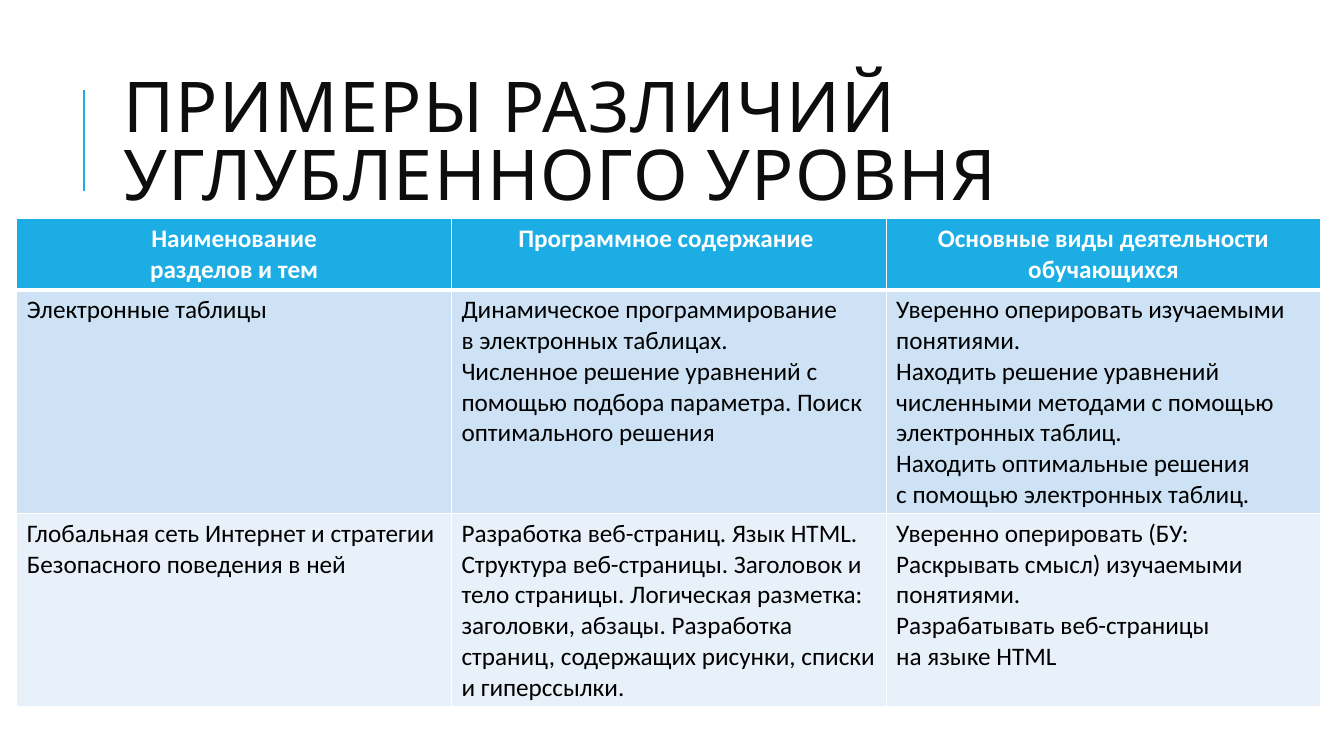
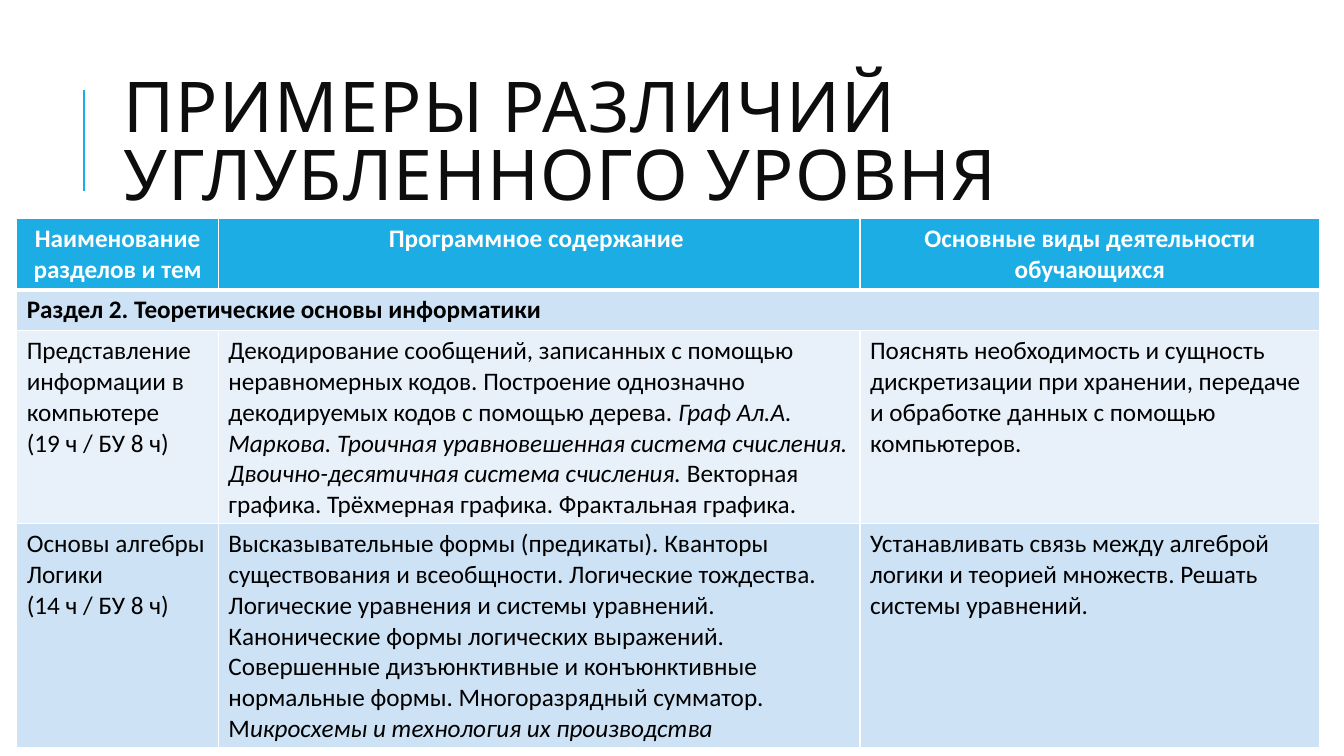
from lxml import etree
from pptx import Presentation
from pptx.dml.color import RGBColor
from pptx.enum.shapes import MSO_CONNECTOR
from pptx.enum.text import MSO_ANCHOR, PP_ALIGN
from pptx.oxml.ns import qn
from pptx.util import Pt

PX = 9525
ACCENT = RGBColor(0x1C, 0xAD, 0xE4)
INK = RGBColor(0x0D, 0x0D, 0x0D)
BLACK = RGBColor(0, 0, 0)
WHITE = RGBColor(0xFF, 0xFF, 0xFF)
BANDS = (RGBColor(0xE8, 0xF1, 0xFA), RGBColor(0xCD, 0xE3, 0xF5))
STRAIGHT = MSO_CONNECTOR.STRAIGHT
MIDDLE = MSO_ANCHOR.MIDDLE
CENTER, LEFT = PP_ALIGN.CENTER, PP_ALIGN.LEFT

TITLE = "ПРИМЕРЫ РАЗЛИЧИЙ УГЛУБЛЕННОГО УРОВНЯ"
HEADER = (2, [
    "Наименование\nразделов и тем",
    "Программное содержание ",
    "Основные виды деятельности\nобучающихся",
])
TABLES = [
    ([414, 414, 414], [
        (7, [
            "Электронные таблицы",
            "Динамическое программирование\nв электронных таблицах.\n"
            "Численное решение уравнений с помощью подбора параметра. Поиск\n"
            "оптимального решения",
            "Уверенно оперировать изучаемыми\nпонятиями.\n"
            "Находить решение уравнений\nчисленными методами с помощью\n"
            "электронных таблиц.\nНаходить оптимальные решения\n"
            "с помощью электронных таблиц.",
        ]),
        (6, [
            "Глобальная сеть Интернет и стратегии\nБезопасного поведения в ней",
            "Разработка веб-страниц. Язык HTML.\n"
            "Структура веб-страницы. Заголовок и\n"
            "тело страницы. Логическая разметка:\n"
            "заголовки, абзацы. Разработка страниц, содержащих рисунки, "
            "списки и гиперссылки.",
            "Уверенно оперировать (БУ: Раскрывать смысл) изучаемыми\n"
            "понятиями.\nРазрабатывать веб-страницы\nна языке HTML",
        ]),
    ]),
    ([192, 611, 438], [
        (1, ["Раздел 2. Теоретические основы информатики"]),
        (6, [
            "Представление информации в компьютере\n(19 ч / БУ 8 ч)",
            "Декодирование сообщений, записанных с помощью неравномерных кодов. "
            "Построение однозначно декодируемых кодов с помощью дерева. "
            "*Граф Ал.А. Маркова. Троичная уравновешенная система счисления. "
            "Двоично-десятичная система счисления.* Векторная графика. "
            "Трёхмерная графика. Фрактальная графика.",
            "Пояснять необходимость и сущность дискретизации при хранении, "
            "передаче и обработке данных с помощью компьютеров.",
        ]),
        (7, [
            "Основы алгебры\nЛогики\n(14 ч / БУ 8 ч)",
            "Высказывательные формы (предикаты). Кванторы\n"
            "существования и всеобщности. Логические тождества. "
            "Логические уравнения и системы уравнений. "
            "Канонические формы логических выражений. "
            "Совершенные дизъюнктивные и конъюнктивные нормальные формы. "
            "Многоразрядный сумматор. М*икросхемы и технология их производства*",
            "Устанавливать связь между алгеброй\n"
            "логики и теорией множеств. Решать системы уравнений.",
        ]),
    ]),
]


class Deck:
    """Hold the shared style and the current slide."""

    def __init__(self):
        self.prs = Presentation()
        self.prs.slide_width, self.prs.slide_height = 1280 * PX, 720 * PX
        self.s = None

    def slide(self, title):
        self.s = self.prs.slides.add_slide(self.prs.slide_layouts[6])
        self.line(80, 182, 80, 86)
        self.title(title)

    def line(self, x1, y1, x2, y2):
        ln = self.s.shapes.add_connector(
            STRAIGHT, x1 * PX, y1 * PX, x2 * PX, y2 * PX)
        ln.line.color.rgb = ACCENT
        ln.line.width = Pt(1.5)
        etree.SubElement(ln._element.spPr, qn("a:effectLst"))

    def title(self, text):
        sp = self.s.shapes.add_textbox(108 * PX, 61 * PX, 1020 * PX, 157 * PX)
        tf = sp.text_frame
        tf.word_wrap = True
        tf.vertical_anchor = MIDDLE
        p = tf.paragraphs[0]
        p.line_spacing = 0.8
        r = self.run(p, text, "Cabin", 50, INK)
        r._r.get_or_add_rPr().set("spc", "100")

    def run(self, p, text, font, size, color, bold=False, italic=False):
        r = p.add_run()
        r.text = text
        r.font.name, r.font.size = font, Pt(size)
        r.font.color.rgb = color
        r.font.bold, r.font.italic = bold, italic
        return r

    def table(self, x, y, cols, rows):
        heights = [10 + 29 * lines for lines, _ in rows]
        tbl = self.s.shapes.add_table(
            len(rows), len(cols), x * PX, y * PX,
            sum(cols) * PX, sum(heights) * PX).table
        tbl.first_row = tbl.horz_banding = False
        for col, width in zip(tbl.columns, cols):
            col.width = width * PX
        for i, (_, texts) in enumerate(rows):
            tbl.rows[i].height = heights[i] * PX
            section = len(texts) == 1
            for j in range(len(cols)):
                cell = tbl.cell(i, j)
                self.borders(cell, 3 if i == 1 else 1, 3 if i == 0 else 1)
                cell.fill.solid()
                cell.fill.fore_color.rgb = BANDS[i % 2] if i else ACCENT
            if section:
                tbl.cell(i, 0).merge(tbl.cell(i, len(cols) - 1))
            for j, text in enumerate(texts):
                self.cell_text(tbl.cell(i, j), text, i == 0, section)

    def cell_text(self, cell, text, header, section):
        tf = cell.text_frame
        for k, para in enumerate(text.split("\n")):
            p = tf.add_paragraph() if k else tf.paragraphs[0]
            p.alignment = CENTER if header else LEFT
            for n, part in enumerate(para.split("*")):
                if part:
                    self.run(p, part, "Calibri", 18, WHITE if header else BLACK,
                             header or section, n % 2 == 1)

    def borders(self, cell, top, bottom):
        tc_pr = cell._tc.get_or_add_tcPr()
        for side, width in (("L", 1), ("R", 1), ("T", top), ("B", bottom)):
            ln = etree.SubElement(tc_pr, qn("a:ln" + side), w=str(Pt(width)))
            fill = etree.SubElement(ln, qn("a:solidFill"))
            etree.SubElement(fill, qn("a:srgbClr"), val=str(WHITE))


def main():
    deck = Deck()
    for cols, rows in TABLES:
        deck.slide(TITLE)
        deck.table(16, 208, cols, [HEADER] + rows)
    deck.prs.save("out.pptx")


if __name__ == "__main__":
    main()
